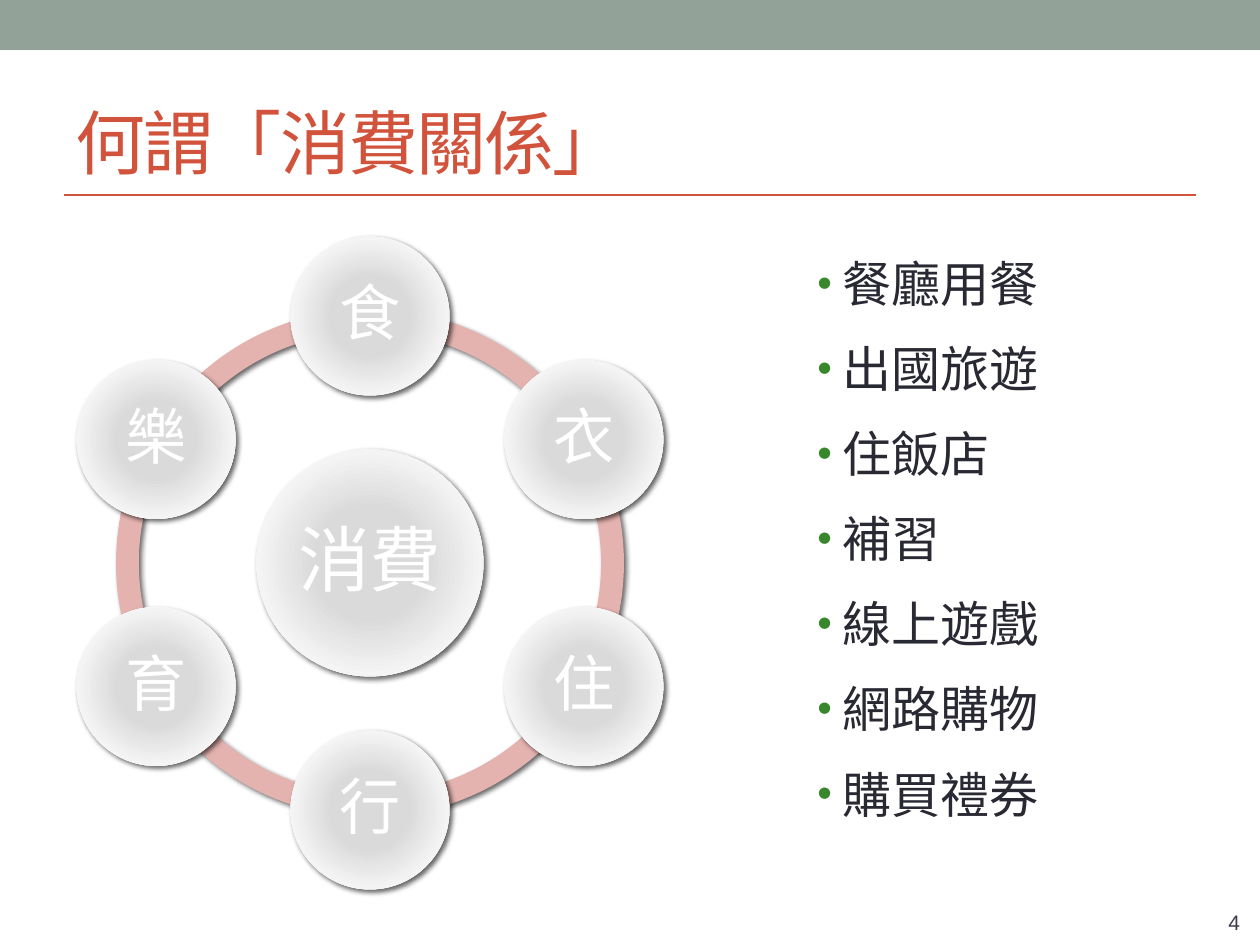
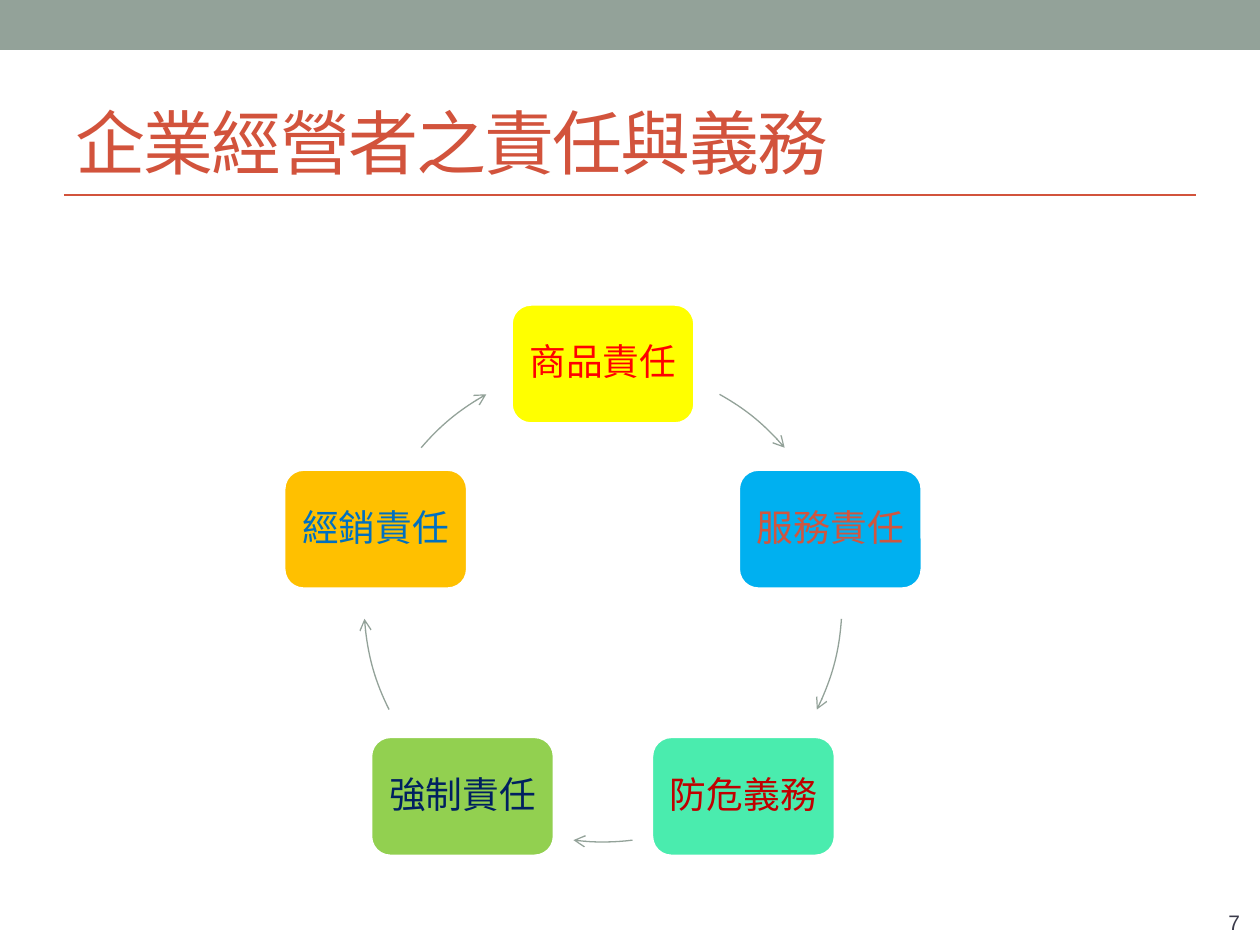
import math

from lxml import etree
from pptx import Presentation
from pptx import util as u
from pptx.dml.color import RGBColor
from pptx.enum import shapes, text
from pptx.oxml.ns import qn

COLORS = {
    "band": "93A299", "title": "D2533C", "body": "292934", "bullet": "38872D",
    "number": "3B3B4B", "ring": "E5B3AF", "white": "FFFFFF", "shadow": "000000",
    "yellow": "FFFF00", "red": "FF0000", "sky": "00B0F0", "brick": "CF5640",
    "mint": "4AECAE", "crimson": "C00000", "green": "92D050", "navy": "002060",
    "amber": "FFC000", "blue": "0070C0",
}
FONT = "Arial"
SLIDE_SIZE = (1260, 945)

CONSUMPTION = {
    "title": "何謂「消費關係」", "title_width": 1043, "number": "4",
    "hub": "消費",
    "needs": ["食", "衣", "住", "行", "育", "樂"],
    "examples": ["餐廳用餐", "出國旅遊", "住飯店", "補習", "線上遊戲", "網路購物", "購買禮券"],
}
DUTIES = {
    "title": "企業經營者之責任與義務", "title_width": 815, "number": "7",
    "cycle": [
        ("商品責任", "yellow", "red"),
        ("服務責任", "sky", "brick"),
        ("防危義務", "mint", "crimson"),
        ("強制責任", "green", "navy"),
        ("經銷責任", "amber", "blue"),
    ],
    "arrow_angles": [(299.2, 319.5), (3.8, 26.5), (82.9, 97.1), (153.5, 176.2), (220.5, 240.8)],
}

WHEEL = {"center": (370, 563), "radius": 247, "ring": 508, "hub": 227, "need": 159}
CYCLE = {"center": (603, 603), "radius": 239, "box": (184, 120)}
GRAY_STOPS = [(0, "DADADA"), (34, "DADADA"), (70, "F4F4F4"), (100, "FFFFFF")]


def px(value):
    return round(value * 914400 / 126)


def rgb(name):
    return RGBColor.from_string(COLORS[name])


def add_xml(parent, tag, **attributes):
    element = etree.SubElement(parent, qn(tag))
    for key, value in attributes.items():
        element.set(key, str(value))
    return element


def write_text(shape, lines, size, color, align="LEFT", anchor="MIDDLE", wrap=False,
               inset=None, line_spacing=None, space_before=0, spacing=None, bullet=False):
    frame = shape.text_frame
    frame.auto_size = text.MSO_AUTO_SIZE.NONE
    frame.word_wrap = wrap
    frame.vertical_anchor = text.MSO_ANCHOR[anchor]
    if inset is not None:
        frame.margin_left = frame.margin_right = px(inset)
        frame.margin_top = frame.margin_bottom = px(inset)
    for index, line in enumerate(lines):
        paragraph = frame.add_paragraph() if index else frame.paragraphs[0]
        paragraph.alignment = text.PP_ALIGN[align]
        paragraph.line_spacing = line_spacing
        paragraph.space_before = u.Pt(space_before if index else 0)
        if bullet:
            add_bullet(paragraph)
        run = paragraph.add_run()
        run.text = line
        run.font.name = FONT
        run.font.size = u.Pt(size)
        run.font.color.rgb = rgb(color)
        if spacing:
            run.font._element.set("spc", str(spacing))


def add_bullet(paragraph):
    properties = paragraph._p.get_or_add_pPr()
    properties.set("marL", str(px(25)))
    properties.set("indent", str(px(-25)))
    add_xml(add_xml(properties, "a:buClr"), "a:srgbClr", val=COLORS["bullet"])
    add_xml(properties, "a:buSzPct", val=85000)
    add_xml(properties, "a:buFont", typeface=FONT)
    add_xml(properties, "a:buChar", char="•")


def add_shape(slide, kind, center, size, fill=None, line=None, line_width=0):
    left, top = (middle - length / 2 for middle, length in zip(center, size))
    shape = slide.shapes.add_shape(shapes.MSO_SHAPE[kind], px(left), px(top), *map(px, size))
    shape.shadow.inherit = False
    if fill:
        shape.fill.solid()
        shape.fill.fore_color.rgb = rgb(fill)
    else:
        shape.fill.background()
    if line:
        shape.line.color.rgb = rgb(line)
        shape.line.width = u.Pt(line_width)
    else:
        shape.line.fill.background()
    return shape


def add_shadow(shape):
    effects = shape._element.spPr.find(qn("a:effectLst"))
    shadow = add_xml(effects, "a:outerShdw", blurRad=u.Pt(3), dist=u.Pt(2),
                     dir=45 * 60000, algn="tl", rotWithShape=0)
    color = add_xml(shadow, "a:srgbClr", val=COLORS["shadow"])
    add_xml(color, "a:alpha", val=60000)


def shade_gray(shape):
    gradient = etree.Element(qn("a:gradFill"), rotWithShape="1")
    stops = add_xml(gradient, "a:gsLst")
    for position, color in GRAY_STOPS:
        add_xml(add_xml(stops, "a:gs", pos=position * 1000), "a:srgbClr", val=color)
    focus = add_xml(gradient, "a:path", path="circle")
    add_xml(focus, "a:fillToRect", l=100000, t=100000, r=100000, b=100000)
    properties = shape._element.spPr
    properties.replace(properties.find(qn("a:noFill")), gradient)


def set_angles(shape, start, end):
    shape.adjustments[0] = start % 360 * 0.6
    shape.adjustments[1] = end % 360 * 0.6


def around(center, radius, index, count):
    angle = math.radians(360 * index / count - 90)
    return center[0] + radius * math.cos(angle), center[1] + radius * math.sin(angle)


def add_base(presentation, content):
    slide = presentation.slides.add_slide(presentation.slide_layouts[5])
    add_shape(slide, "RECTANGLE", (630, 25), (1260, 50), "band")
    rule = slide.shapes.add_connector(shapes.MSO_CONNECTOR.STRAIGHT,
                                      px(64), px(195), px(1196), px(195))
    rule.line.color.rgb = rgb("title")
    rule.line.width = u.Pt(1.5)
    add_xml(rule._element.spPr, "a:effectLst")
    title = slide.shapes.title
    title.left, title.top = px(63), px(73)
    title.width, title.height = px(content["title_width"]), px(136)
    write_text(title, [content["title"]], 40, "title", wrap=True, spacing=-100)
    number = slide.shapes.add_textbox(px(1216), px(900), px(44), px(45))
    write_text(number, [content["number"]], 12, "number")
    return slide


def add_disc(slide, center, diameter, label, size):
    disc = add_shape(slide, "OVAL", center, (diameter, diameter))
    shade_gray(disc)
    add_shadow(disc)
    write_text(disc, [label], size, "white", align="CENTER", inset=6, line_spacing=0.9)


def build_consumption(presentation):
    slide = add_base(presentation, CONSUMPTION)
    examples = slide.shapes.add_textbox(px(805), px(231), px(399), px(679))
    write_text(examples, CONSUMPTION["examples"], 28, "body", anchor="TOP", wrap=True,
               line_spacing=u.Pt(43), space_before=5.6, bullet=True)
    center, needs = WHEEL["center"], CONSUMPTION["needs"]
    step = 360 / len(needs)
    for index in range(len(needs)):
        arc = add_shape(slide, "BLOCK_ARC", center, (WHEEL["ring"],) * 2, "ring")
        set_angles(arc, 270 + step * index, 270 + step * (index + 1))
        arc.adjustments[2] = 0.045
        add_shadow(arc)
    add_disc(slide, center, WHEEL["hub"], CONSUMPTION["hub"], 41)
    for index, need in enumerate(needs):
        spot = around(center, WHEEL["radius"], index, len(needs))
        add_disc(slide, spot, WHEEL["need"], need, 35)


def build_duties(presentation):
    slide = add_base(presentation, DUTIES)
    center, radius, cycle = CYCLE["center"], CYCLE["radius"], DUTIES["cycle"]
    for index, (label, fill, color) in enumerate(cycle):
        spot = around(center, radius, index, len(cycle))
        box = add_shape(slide, "ROUNDED_RECTANGLE", spot, CYCLE["box"], fill, "white", 2)
        write_text(box, [label], 21, color, align="CENTER", inset=11, line_spacing=0.9)
    for start, end in DUTIES["arrow_angles"]:
        arrow = add_shape(slide, "ARC", center, (2 * radius,) * 2, line="band", line_width=0.75)
        set_angles(arrow, start, end)
        add_xml(arrow.line._get_or_add_ln(), "a:tailEnd", type="arrow")


def main():
    presentation = Presentation()
    presentation.slide_width, presentation.slide_height = map(px, SLIDE_SIZE)
    build_consumption(presentation)
    build_duties(presentation)
    presentation.save("out.pptx")


if __name__ == "__main__":
    main()
